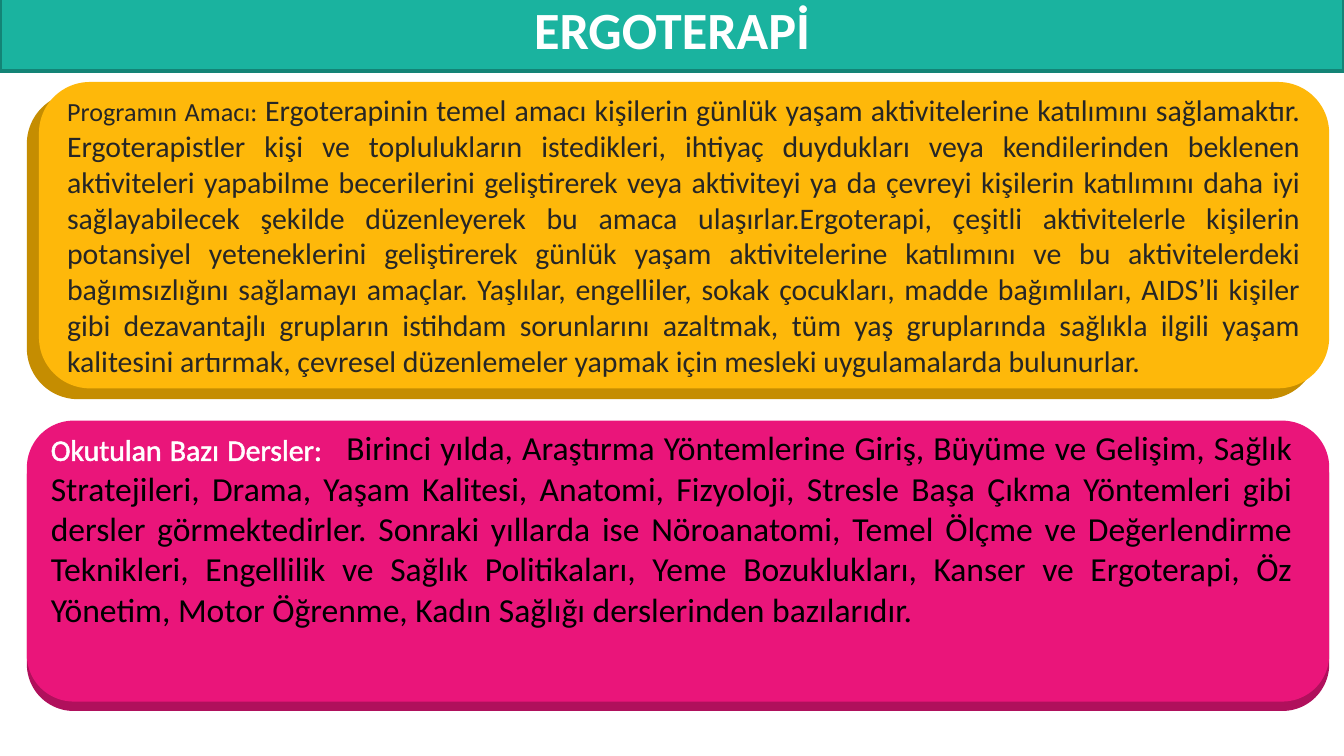
from lxml.etree import SubElement
from pptx import Presentation
from pptx.dml.color import RGBColor
from pptx.enum.shapes import MSO_SHAPE as Preset
from pptx.enum.text import MSO_ANCHOR as Anchor, MSO_AUTO_SIZE as AutoSize, PP_ALIGN as Align
from pptx.oxml.ns import qn
from pptx.util import Inches, Pt

SLIDE_WIDTH = 10
SLIDE_HEIGHT = SLIDE_WIDTH * 9 / 16
FONT = "Calibri"
WHITE, DARK, BLACK = "FFFFFF", "262626", "000000"
TEAL, DEEP_TEAL = "1AB39F", "138476"
AMBER, DEEP_AMBER = "FEB80A", "C58D01"
PINK, DEEP_PINK = "EA157A", "B0105C"
OUTLINE_WIDTH = 1.45

# Each run: text, size, colour, white outline
TITLE = [("ERGOTERAPİ", 28, WHITE, False)]
PURPOSE = [
    ("Programın Amacı: ", 14, DARK, True),
    ("Ergoterapinin temel amacı kişilerin günlük yaşam aktivitelerine katılımını "
     "sağlamaktır. Ergoterapistler kişi ve toplulukların istedikleri, ihtiyaç duydukları "
     "veya kendilerinden beklenen aktiviteleri yapabilme becerilerini geliştirerek veya "
     "aktiviteyi ya da çevreyi kişilerin katılımını daha iyi sağlayabilecek şekilde "
     "düzenleyerek bu amaca ulaşırlar.Ergoterapi, çeşitli aktivitelerle kişilerin "
     "potansiyel yeteneklerini geliştirerek günlük yaşam aktivitelerine katılımını ve bu "
     "aktivitelerdeki bağımsızlığını sağlamayı amaçlar. Yaşlılar, engelliler, sokak "
     "çocukları, madde bağımlıları, AIDS’li kişiler gibi dezavantajlı grupların istihdam "
     "sorunlarını azaltmak, tüm yaş gruplarında sağlıkla ilgili yaşam kalitesini artırmak, "
     "çevresel düzenlemeler yapmak için mesleki uygulamalarda bulunurlar.", 16, DARK, False),
]
COURSES = [
    ("Okutulan Bazı Dersler:", 16, WHITE, True),
    ("  ", 14, WHITE, True),
    (" Birinci yılda, Araştırma Yöntemlerine Giriş, Büyüme ve Gelişim, Sağlık Stratejileri, "
     "Drama, Yaşam Kalitesi, Anatomi, Fizyoloji, Stresle Başa Çıkma Yöntemleri gibi dersler "
     "görmektedirler. Sonraki yıllarda ise Nöroanatomi, Temel Ölçme ve Değerlendirme "
     "Teknikleri, Engellilik ve Sağlık Politikaları, Yeme Bozuklukları, Kanser ve Ergoterapi, "
     "Öz Yönetim, Motor Öğrenme, Kadın Sağlığı derslerinden bazılarıdır.", 18, BLACK, False),
]


def rgb(value):
    return RGBColor.from_string(value)


def add_block(shapes, preset, box, fill, line=None):
    block = shapes.add_shape(preset, *map(Inches, box))
    block.shadow.inherit = False
    block.fill.solid()
    block.fill.fore_color.rgb = rgb(fill)
    if line:
        block.line.color.rgb = rgb(line)
        block.line.width = Pt(2)
    else:
        block.line.fill.background()
    return block


def outline_text(run):
    """Give the letters a thin white outline."""
    line = SubElement(run.font._element, qn("a:ln"), w=str(Pt(OUTLINE_WIDTH)))
    SubElement(SubElement(line, qn("a:solidFill")), qn("a:srgbClr"), val=WHITE)
    run.font._element.insert(0, line)


def write(frame, runs, align, anchor, bold=False):
    frame.word_wrap = True
    frame.vertical_anchor = anchor
    paragraph = frame.paragraphs[0]
    paragraph.alignment = align
    for text, size, colour, outlined in runs:
        run = paragraph.add_run()
        run.text = text
        run.font.name, run.font.size, run.font.bold = FONT, Pt(size), bold
        run.font.color.rgb = rgb(colour)
        if outlined:
            outline_text(run)


def add_card(slide, front_box, shift, front_fill, back_fill):
    """Group a rounded card with its darker edge, moved by shift, behind it."""
    left, top, width, height = front_box
    card = slide.shapes.add_group_shape()
    back_box = (left + shift[0], top + shift[1], width, height)
    add_block(card.shapes, Preset.ROUNDED_RECTANGLE, back_box, back_fill)
    front = add_block(card.shapes, Preset.ROUNDED_RECTANGLE, front_box, front_fill)
    return card, front


prs = Presentation()
prs.slide_width, prs.slide_height = Inches(SLIDE_WIDTH), Inches(SLIDE_HEIGHT)
slide = prs.slides.add_slide(prs.slide_layouts[6])

banner_box = (0, -0.1, SLIDE_WIDTH, 0.63)
banner = add_block(slide.shapes, Preset.RECTANGLE, banner_box, TEAL, DEEP_TEAL)
banner.text_frame.margin_left = banner.text_frame.margin_right = Inches(0.08)
banner.text_frame.margin_top = banner.text_frame.margin_bottom = Inches(0.04)
write(banner.text_frame, TITLE, Align.CENTER, Anchor.MIDDLE, bold=True)

_, purpose_front = add_card(slide, (0.29, 0.61, 9.6, 2.28), (-0.09, 0.08), AMBER, DEEP_AMBER)
write(purpose_front.text_frame, PURPOSE, Align.JUSTIFY, Anchor.MIDDLE)

courses_card, _ = add_card(slide, (0.2, 3.13, 9.69, 2.09), (0, 0.07), PINK, DEEP_PINK)
courses = courses_card.shapes.add_textbox(*map(Inches, (0.28, 3.13, 9.44, 1.62)))
write(courses.text_frame, COURSES, Align.JUSTIFY, Anchor.TOP)
courses.text_frame.auto_size = AutoSize.SHAPE_TO_FIT_TEXT

prs.save("out.pptx")
